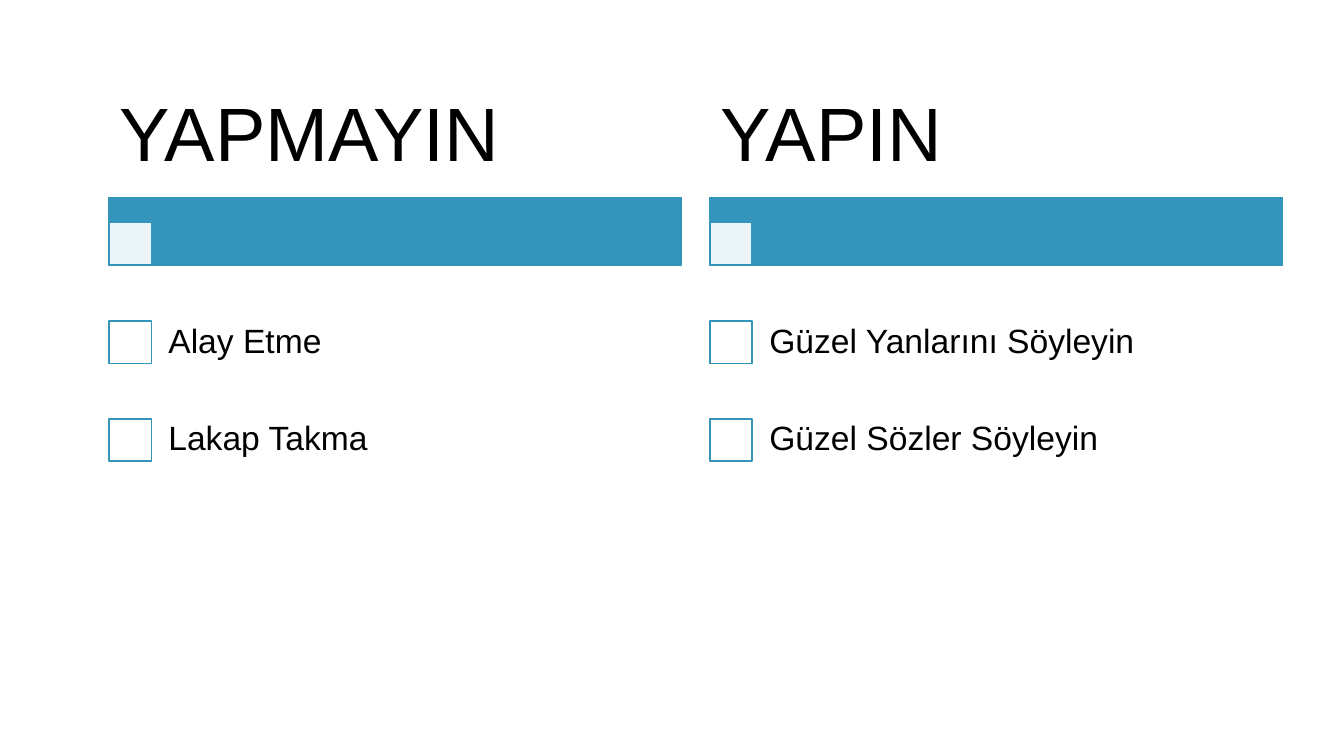
from dataclasses import dataclass

from lxml import etree
from pptx import Presentation
from pptx.dml.color import RGBColor
from pptx.enum.shapes import MSO_SHAPE
from pptx.enum.text import MSO_ANCHOR, PP_ALIGN
from pptx.oxml.ns import qn
from pptx.util import Inches, Pt

RECTANGLE = MSO_SHAPE.RECTANGLE
MIDDLE = MSO_ANCHOR.MIDDLE
LEFT = PP_ALIGN.LEFT
BLANK_LAYOUT = 6


@dataclass(frozen=True)
class Theme:
    accent: RGBColor = RGBColor(0x34, 0x94, 0xBA)
    surface: RGBColor = RGBColor(0xFF, 0xFF, 0xFF)
    ink: RGBColor = RGBColor(0, 0, 0)
    font: str = "Arial"
    heading_size: int = 54
    item_size: int = 24
    line_width: int = 1


THEME = Theme()

COLUMNS = [
    ("YAPMAYIN", ["Alay Etme", "Lakap Takma"]),
    ("YAPIN", ["Güzel Yanlarını Söyleyin", "Güzel Sözler Söyleyin"]),
]
COLUMNS_LEFT = 1.08
COLUMNS_TOP = 0.76
COLUMN_WIDTH = 5.68
COLUMN_PITCH = 5.96

HEADING_HEIGHT = 1.2
BAR_HEIGHT = 0.67
BOX_SIZE = 0.42
ITEMS_OFFSET = 2.15
ITEM_HEIGHT = 0.97
ITEM_INDENT = 0.4


def add_rectangle(slide, left, top, width, height, color, opacity=100):
    shape = slide.shapes.add_shape(
        RECTANGLE, Inches(left), Inches(top), Inches(width), Inches(height)
    )
    shape.shadow.inherit = False
    shape.fill.solid()
    shape.fill.fore_color.rgb = color
    shape.line.color.rgb = THEME.accent
    shape.line.width = Pt(THEME.line_width)
    if opacity < 100:
        fill_color = shape.fill._xPr.find(qn("a:solidFill"))[0]
        etree.SubElement(fill_color, qn("a:alpha"), val=str(opacity * 1000))


def add_label(slide, left, top, width, height, text, size, inset_x, inset_y):
    label = slide.shapes.add_textbox(
        Inches(left), Inches(top), Inches(width), Inches(height)
    )
    frame = label.text_frame
    frame.word_wrap = True
    frame.vertical_anchor = MIDDLE
    frame.margin_left = frame.margin_right = Inches(inset_x)
    frame.margin_top = frame.margin_bottom = Inches(inset_y)
    frame.text = text
    paragraph = frame.paragraphs[0]
    paragraph.alignment = LEFT
    paragraph.line_spacing = 0.9
    paragraph.font.name = THEME.font
    paragraph.font.size = Pt(size)
    paragraph.font.color.rgb = THEME.ink


def add_column(slide, left, top, width, heading, items):
    bar_top = top + HEADING_HEIGHT
    box_top = bar_top + BAR_HEIGHT - BOX_SIZE
    add_rectangle(slide, left, bar_top, width, BAR_HEIGHT, THEME.accent)
    add_rectangle(slide, left, box_top, BOX_SIZE, BOX_SIZE, THEME.surface, 90)
    add_label(slide, left, top, width, HEADING_HEIGHT, heading,
              THEME.heading_size, 0.11, 0.07)
    for index, item in enumerate(items):
        item_top = top + ITEMS_OFFSET + index * ITEM_HEIGHT
        add_item(slide, left, item_top, width, item)


def add_item(slide, left, top, width, text):
    box_top = top + (ITEM_HEIGHT - BOX_SIZE) / 2
    add_rectangle(slide, left, box_top, BOX_SIZE, BOX_SIZE, THEME.surface)
    add_label(slide, left + ITEM_INDENT, top, width - ITEM_INDENT, ITEM_HEIGHT,
              text, THEME.item_size, 0.19, 0.19)


def main():
    presentation = Presentation()
    presentation.slide_width = Inches(13.33)
    presentation.slide_height = Inches(7.5)
    slide = presentation.slides.add_slide(presentation.slide_layouts[BLANK_LAYOUT])
    for index, (heading, items) in enumerate(COLUMNS):
        left = COLUMNS_LEFT + index * COLUMN_PITCH
        add_column(slide, left, COLUMNS_TOP, COLUMN_WIDTH, heading, items)
    presentation.save("out.pptx")


if __name__ == "__main__":
    main()
